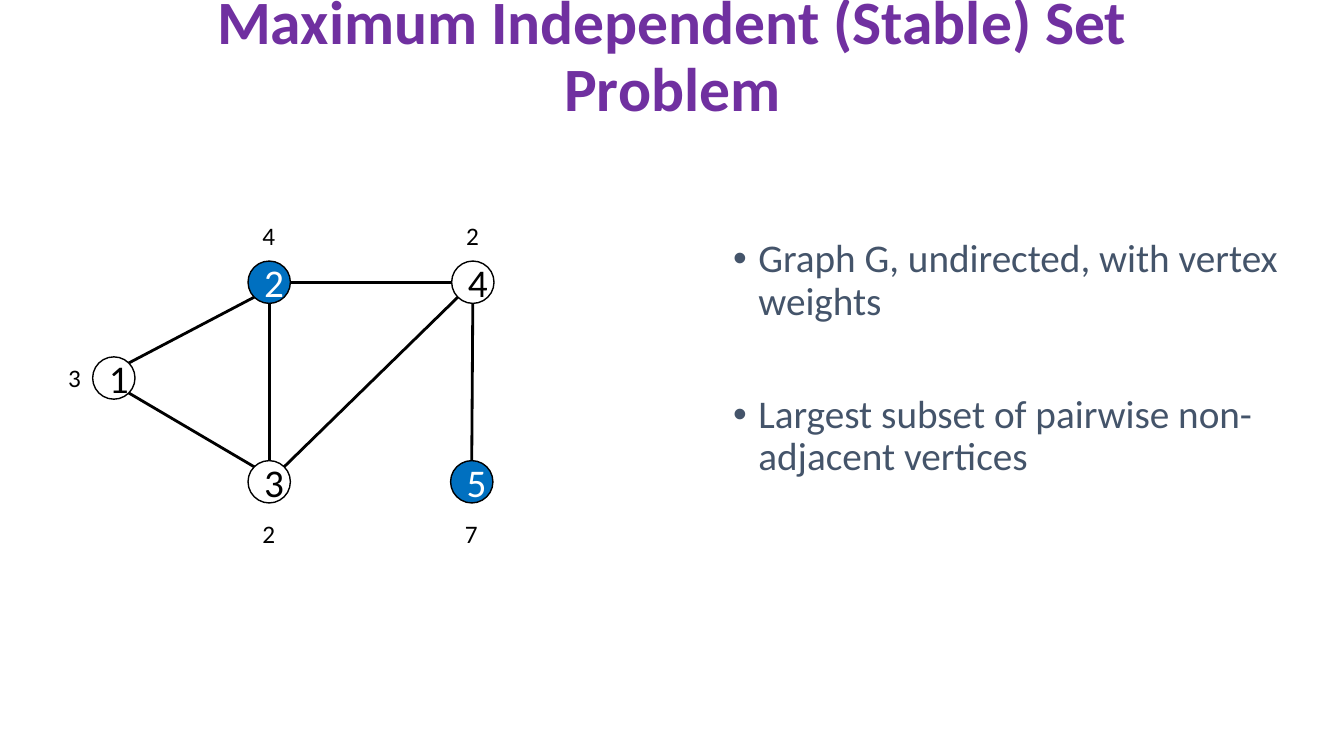
from dataclasses import dataclass
from math import hypot

from pptx import Presentation
from pptx.dml.color import RGBColor
from pptx.enum.shapes import MSO_CONNECTOR, MSO_SHAPE
from pptx.enum.text import MSO_ANCHOR, MSO_AUTO_SIZE, PP_ALIGN
from pptx.oxml.ns import qn
from pptx.slide import Slide
from pptx.text.text import TextFrame, _Paragraph
from pptx.util import Inches, Pt
from lxml import etree

CENTER = PP_ALIGN.CENTER
MIDDLE = MSO_ANCHOR.MIDDLE
NO_FIT = MSO_AUTO_SIZE.NONE
GROW = MSO_AUTO_SIZE.SHAPE_TO_FIT_TEXT
ELLIPSE = MSO_SHAPE.OVAL
STRAIGHT = MSO_CONNECTOR.STRAIGHT

BLACK = RGBColor(0x00, 0x00, 0x00)
WHITE = RGBColor(0xFF, 0xFF, 0xFF)
PURPLE = RGBColor(0x70, 0x30, 0xA0)
BLUE = RGBColor(0x00, 0x70, 0xC0)
SLATE = RGBColor(0x44, 0x54, 0x6A)
FONT = "Calibri"

SLIDE_W, SLIDE_H = Inches(13.33), Inches(7.5)
COL, ROW = SLIDE_W / 100, SLIDE_H / 100  # grid of 100 columns by 100 rows
DIAMETER = Inches(0.42)
LABEL_W, LABEL_H = Inches(0.33), Inches(0.4)

# Sides of a vertex, as (x, y) directions
UP, DOWN, LEFT, RIGHT = (0, -1), (0, 1), (-1, 0), (1, 0)
UP_LEFT, UP_RIGHT, DOWN_LEFT, DOWN_RIGHT = (-1, -1), (1, -1), (-1, 1), (1, 1)
LABEL_GAP = {UP: 6.13, DOWN: 6.8, LEFT: 2.9}  # in rows, or columns for LEFT


@dataclass
class Vertex:
    name: str
    col: float
    row: float
    weight: str
    label_side: tuple[int, int]
    chosen: bool = False

    def site(self, side: tuple[int, int]) -> tuple[int, int]:
        """Point where the rim meets the given direction."""
        dx, dy = side
        reach = DIAMETER / 2 / hypot(dx, dy)
        return int(self.col * COL + dx * reach), int(self.row * ROW + dy * reach)


@dataclass
class Edge:
    start: str
    start_side: tuple[int, int]
    end: str
    end_side: tuple[int, int]


VERTICES = [
    Vertex("1", 8.47, 50, "3", LEFT),
    Vertex("2", 20.03, 37.33, "4", UP, chosen=True),
    Vertex("3", 20.03, 63.73, "2", DOWN),
    Vertex("4", 35.18, 37.33, "2", UP),
    Vertex("5", 35.1, 63.73, "7", DOWN, chosen=True),
]
EDGES = [
    Edge("2", DOWN_LEFT, "1", UP_RIGHT),
    Edge("3", UP_LEFT, "1", DOWN_RIGHT),
    Edge("3", UP, "2", DOWN),
    Edge("5", UP, "4", DOWN),
    Edge("3", UP_RIGHT, "4", DOWN_LEFT),
    Edge("2", RIGHT, "4", LEFT),
]
POINTS = [
    ("Graph G, undirected, with vertex weights", 10),
    ("Largest subset of pairwise non-adjacent vertices", 50.8),
]


def style(p: _Paragraph, size: float, color: RGBColor, bold: bool = False) -> None:
    for r in p.runs:
        r.font.name, r.font.size, r.font.bold = FONT, Pt(size), bold
        r.font.color.rgb = color


def place(sp, col: float, row: float, cols: float, rows: float) -> TextFrame:
    sp.left, sp.top = int(col * COL), int(row * ROW)
    sp.width, sp.height = int(cols * COL), int(rows * ROW)
    sp.text_frame.auto_size = NO_FIT
    return sp.text_frame


def add_title(s: Slide) -> None:
    tf = place(s.shapes.title, 6.9, 1.6, 86.27, 12.13)
    tf.text = "Maximum Independent (Stable) Set Problem"
    tf.vertical_anchor = MIDDLE
    p = tf.paragraphs[0]
    p.alignment, p.line_spacing = CENTER, 0.9
    style(p, 44, PURPLE, bold=True)


def add_points(s: Slide) -> None:
    tf = place(s.placeholders[1], 53.8, 30.93, 44.7, 66.27)
    tf.text = "\n".join(text for text, _ in POINTS)
    for p, (_, before) in zip(tf.paragraphs, POINTS):
        p.line_spacing, p.space_before = 0.9, Pt(before)
        pPr = p._p.get_or_add_pPr()
        pPr.set("marL", str(Inches(0.25)))
        pPr.set("indent", str(-Inches(0.25)))
        etree.SubElement(pPr, qn("a:buFont"), typeface="Arial")
        etree.SubElement(pPr, qn("a:buChar"), char="•")
        style(p, 28, SLATE)


def add_edge(s: Slide, edge: Edge, by_name: dict[str, Vertex]) -> None:
    start = by_name[edge.start].site(edge.start_side)
    end = by_name[edge.end].site(edge.end_side)
    line = s.shapes.add_connector(STRAIGHT, *start, *end)
    line.line.color.rgb, line.line.width = BLACK, Pt(2)
    etree.SubElement(line._element.spPr, qn("a:effectLst"))


def add_vertex(s: Slide, v: Vertex) -> None:
    x, y = int(v.col * COL), int(v.row * ROW)
    sp = s.shapes.add_shape(ELLIPSE, x - DIAMETER // 2, y - DIAMETER // 2,
                            DIAMETER, DIAMETER)
    sp.shadow.inherit = False
    sp.line.color.rgb, sp.line.width = BLACK, Pt(1)
    if v.chosen:
        sp.fill.solid()
        sp.fill.fore_color.rgb = BLUE
    else:
        sp.fill.background()
    tf = sp.text_frame
    tf.text, tf.vertical_anchor = v.name, MIDDLE
    tf.paragraphs[0].alignment = CENTER
    style(tf.paragraphs[0], 28, WHITE if v.chosen else BLACK)


def add_weight(s: Slide, v: Vertex) -> None:
    dx, dy = v.label_side
    gap = LABEL_GAP[v.label_side]
    x, y = (v.col + dx * gap) * COL, (v.row + dy * gap) * ROW
    box = s.shapes.add_textbox(int(x - LABEL_W / 2), int(y - LABEL_H / 2),
                               LABEL_W, LABEL_H)
    tf = box.text_frame
    tf.text, tf.word_wrap, tf.auto_size = v.weight, False, GROW
    style(tf.paragraphs[0], 18, BLACK)


def main() -> None:
    prs = Presentation()
    prs.slide_width, prs.slide_height = SLIDE_W, SLIDE_H
    s = prs.slides.add_slide(prs.slide_layouts[1])

    # Title and bullet list
    add_title(s)
    add_points(s)

    # Weighted graph
    by_name = {v.name: v for v in VERTICES}
    for v in VERTICES:
        add_vertex(s, v)
    for edge in EDGES:
        add_edge(s, edge, by_name)
    for v in VERTICES:
        add_weight(s, v)

    prs.save("out.pptx")


if __name__ == "__main__":
    main()
